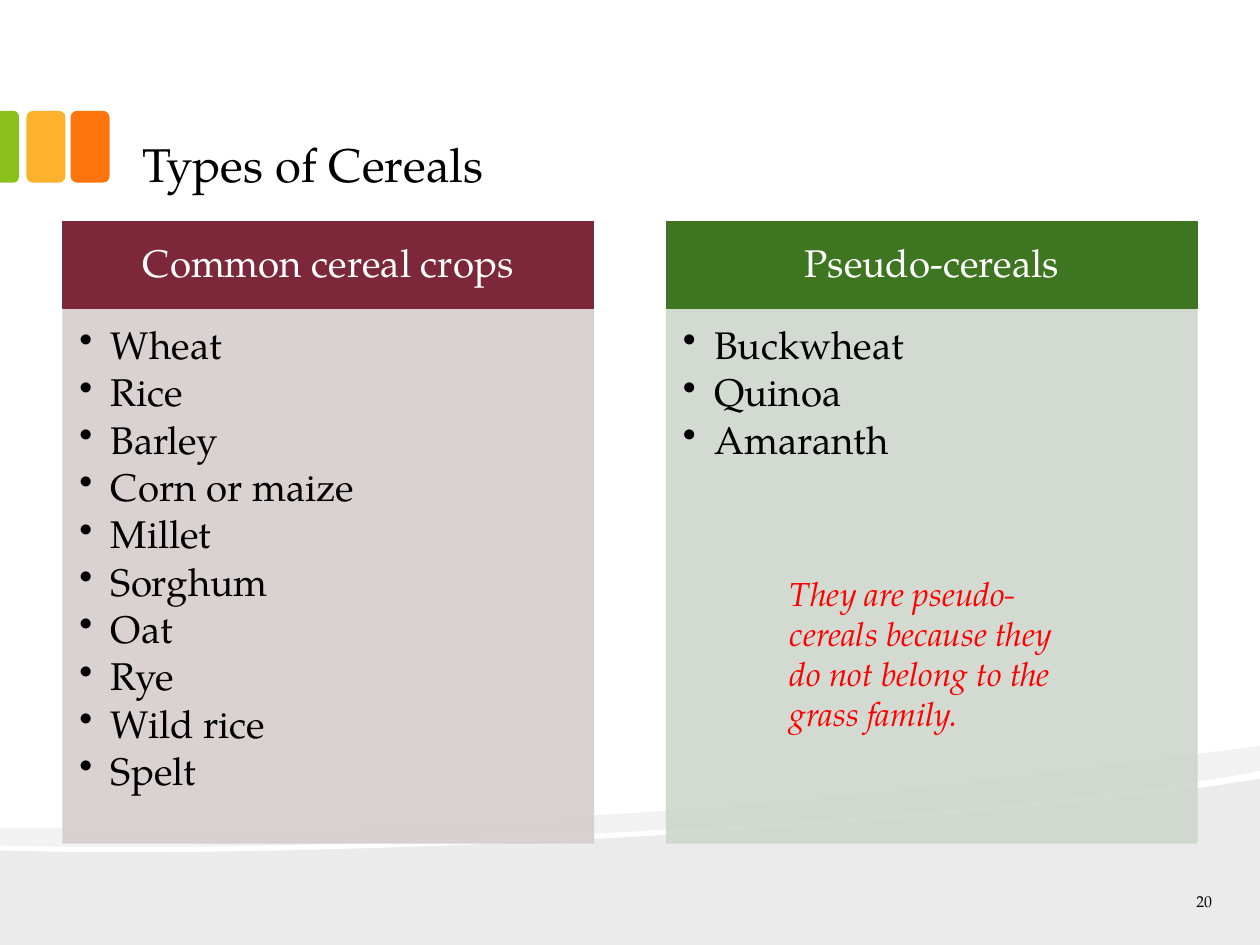
from dataclasses import dataclass

from lxml import etree
from pptx import Presentation
from pptx import util as u
from pptx.dml.color import RGBColor
from pptx.enum import shapes, text
from pptx.oxml.ns import qn

FONT = "TeX Gyre Pagella"
Point = tuple[float, float]
Box = tuple[float, float, float, float]


@dataclass
class Column:
    heading: str
    crops: list[str]
    dark: str
    light: str


@dataclass
class Wave:
    start: Point
    pieces: list[list[Point]]
    opacity: int


@dataclass
class Block:
    box: Box
    color: str
    preset: shapes.MSO_SHAPE
    rotation: int = 0


COLUMNS = [
    Column("Common cereal crops",
           ["Wheat", "Rice", "Barley", "Corn or maize", "Millet", "Sorghum",
            "Oat", "Rye", "Wild rice", "Spelt"], "7C283A", "D7CDCE"),
    Column("Pseudo-cereals", ["Buckwheat", "Quinoa", "Amaranth"], "3E7520", "CED6CD"),
]
WAVES = [
    Wave((10, 6.18), [[(10, 7.5)], [(0, 7.5)], [(0, 6.75)],
                      [(2.64, 6.83), (7.82, 6.55), (10, 6.18)]], 8),
    Wave((10, 5.92), [[(10, 6.12)], [(9.42, 6.23), (8.62, 6.33), (7.72, 6.41)],
                      [(5.23, 6.63), (1.93, 6.77), (0, 6.71)], [(0, 6.57)],
                      [(4.89, 6.62), (7.28, 6.27), (10, 5.92)]], 5),
]
BLOCKS = [
    Block((0.56, 0.88, 0.31, 0.57), "FE750E", shapes.MSO_SHAPE.ROUNDED_RECTANGLE),
    Block((0.21, 0.88, 0.31, 0.57), "FCB22C", shapes.MSO_SHAPE.ROUNDED_RECTANGLE),
    Block((-0.21, 1.09, 0.57, 0.15), "89C01C",
          shapes.MSO_SHAPE.ROUND_2_SAME_RECTANGLE, 90),
]
COLUMN_LEFT, COLUMN_STEP, COLUMN_WIDTH = 0.5, 4.79, 4.21
HEADER_TOP, HEADER_HEIGHT = 1.76, 0.69
PANEL_TOP, PANEL_HEIGHT = 2.46, 4.23


def paint(color_fill, color: str, opacity: int = 100) -> None:
    color_fill.solid()
    color_fill.fore_color.rgb = RGBColor.from_string(color)
    if opacity < 100:
        solid = color_fill._xPr.find(qn("a:solidFill"))
        etree.SubElement(solid[0], qn("a:alpha"), val=str(opacity * 1000))


def inches(box: Box) -> list[u.Length]:
    return [u.Inches(value) for value in box]


def curve(points: list[Point], steps: int = 24) -> list[Point]:
    (x0, y0), (x1, y1), (x2, y2), (x3, y3) = points

    def at(t: float, a: float, b: float, c: float, d: float) -> float:
        s = 1 - t
        return s**3 * a + 3 * s * s * t * b + 3 * s * t * t * c + t**3 * d

    return [(at(i / steps, x0, x1, x2, x3), at(i / steps, y0, y1, y2, y3))
            for i in range(1, steps + 1)]


def add_wave(slide, wave: Wave) -> None:
    outline = [wave.start]
    for piece in wave.pieces:
        outline += curve([outline[-1], *piece]) if len(piece) == 3 else piece
    vertices = [(u.Inches(x), u.Inches(y)) for x, y in outline]
    builder = slide.shapes.build_freeform(*vertices[0])
    builder.add_line_segments(vertices[1:], close=True)
    shape = builder.convert_to_shape()
    shape.shadow.inherit = False
    paint(shape.fill, "000000", wave.opacity)
    shape.line.fill.background()


def add_block(slide, block: Block):
    shape = slide.shapes.add_shape(block.preset, *inches(block.box))
    shape.shadow.inherit = False
    shape.rotation = block.rotation
    paint(shape.fill, block.color)
    shape.line.fill.background()
    return shape


def add_rectangle(slide, box: Box, color: str, opacity: int = 100):
    shape = slide.shapes.add_shape(shapes.MSO_SHAPE.RECTANGLE, *inches(box))
    shape.shadow.inherit = False
    paint(shape.fill, color, opacity)
    paint(shape.line.fill, color, opacity)
    shape.line.width = u.Pt(0.85)
    return shape


def write(shape, lines: list[str], size: float, color: str, margins: Box,
          anchor=text.MSO_ANCHOR.TOP, align=text.PP_ALIGN.LEFT,
          italic: bool = False) -> list:
    frame = shape.text_frame
    frame.word_wrap = True
    frame.vertical_anchor = anchor
    (frame.margin_left, frame.margin_top,
     frame.margin_right, frame.margin_bottom) = inches(margins)
    for index, line in enumerate(lines):
        paragraph = frame.add_paragraph() if index else frame.paragraphs[0]
        paragraph.alignment = align
        run = paragraph.add_run()
        run.text = line
        run.font.name = FONT
        run.font.size = u.Pt(size)
        run.font.italic = italic
        run.font.color.rgb = RGBColor.from_string(color)
    return list(frame.paragraphs)


def add_bullet(paragraph) -> None:
    properties = paragraph._p.get_or_add_pPr()
    properties.set("marL", str(u.Inches(0.25)))
    properties.set("indent", str(-u.Inches(0.25)))
    etree.SubElement(properties, qn("a:buChar"), char="•")


def add_column(slide, column: Column, left: float) -> None:
    header = add_rectangle(
        slide, (left, HEADER_TOP, COLUMN_WIDTH, HEADER_HEIGHT), column.dark)
    heading = write(header, [column.heading], 22, "FFFFFF", (0.17, 0.1, 0.17, 0.1),
                    text.MSO_ANCHOR.MIDDLE, text.PP_ALIGN.CENTER)[0]
    heading.line_spacing = 0.9
    panel = add_rectangle(
        slide, (left, PANEL_TOP, COLUMN_WIDTH, PANEL_HEIGHT), column.light, 90)
    for paragraph in write(panel, column.crops, 22, "000000", (0.13, 0.13, 0.17, 0.19)):
        paragraph.line_spacing = 0.9
        paragraph.space_after = u.Pt(3.3)
        add_bullet(paragraph)


def main() -> None:
    presentation = Presentation()
    presentation.slide_width = u.Inches(10)
    presentation.slide_height = u.Inches(7.5)
    slide = presentation.slides.add_slide(presentation.slide_layouts[6])

    for wave in WAVES:
        add_wave(slide, wave)
    for block in BLOCKS:
        shape = add_block(slide, block)
        if block.rotation:
            shape.adjustments[0] = 0.29

    title = slide.shapes.add_textbox(*inches((1, 0.17, 8, 1.42)))
    write(title, ["Types of Cereals"], 27, "000000", (0.13, 0.07, 0.13, 0.07),
          text.MSO_ANCHOR.BOTTOM)
    for index, column in enumerate(COLUMNS):
        add_column(slide, column, COLUMN_LEFT + index * COLUMN_STEP)

    note = slide.shapes.add_textbox(*inches((6.17, 4.5, 2.5, 1.38)))
    write(note, ["They are pseudo-cereals because they do not belong to the grass family."],
          19, "FF0000", (0.1, 0.05, 0.1, 0.05), italic=True)
    number = slide.shapes.add_textbox(*inches((9.08, 7.05, 0.67, 0.2)))
    write(number, ["20"], 9, "000000", (0.13, 0.07, 0.13, 0.07),
          text.MSO_ANCHOR.MIDDLE, text.PP_ALIGN.RIGHT)
    presentation.save("out.pptx")


if __name__ == "__main__":
    main()
